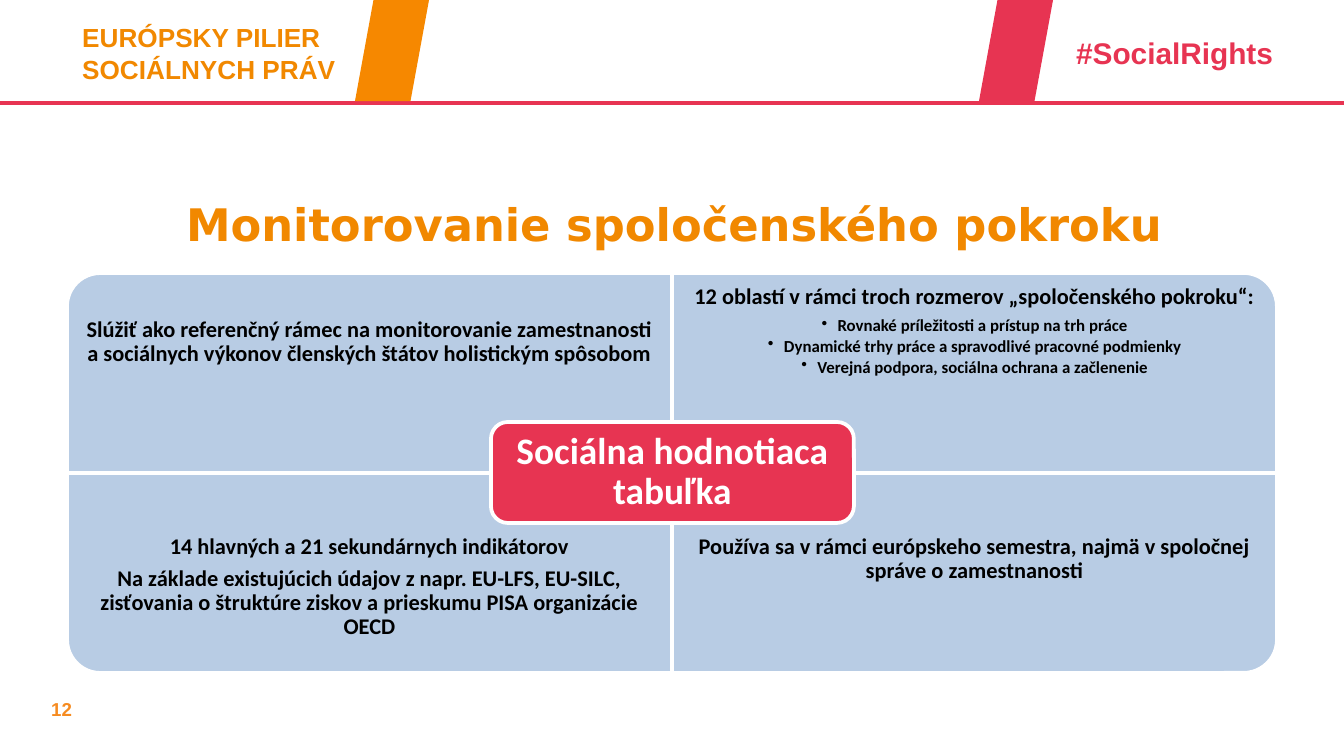
from dataclasses import dataclass

from lxml import etree
from pptx import Presentation
from pptx import util as u
from pptx.dml.color import RGBColor
from pptx.enum import shapes, text
from pptx.oxml.ns import qn


@dataclass(frozen=True)
class Theme:
    gold: str = "F18800"
    band: str = "F68800"
    page: str = "F68B20"
    red: str = "E73452"
    blue: str = "B8CCE4"
    white: str = "FFFFFF"
    black: str = "000000"
    head: str = "Arial"
    body: str = "Calibri"
    show: str = "DejaVu Sans"
    tiny: int = 9
    small: int = 10
    main: int = 12
    mark: int = 14
    tag: int = 16
    hub: int = 20
    title: int = 24


T = Theme()
SIZE = (1344, 756)
TITLE = "Monitorovanie spoločenského pokroku"
HUB = "Sociálna hodnotiaca tabuľka"
LABELS = [
    ("12", (38, 691, 293, 36), T.small, T.page),
    ("EURÓPSKY PILIER\nSOCIÁLNYCH PRÁV", (69, 15, 341, 77), T.mark, T.gold),
    ("#SocialRights", (1063, 28, 254, 50), T.tag, T.red),
]
BANDS = [(355, T.band), (979, T.red)]
PANELS = [
    (0, 0, 270, 33, [
        ("Slúžiť ako referenčný rámec na monitorovanie zamestnanosti "
         "a sociálnych výkonov členských štátov holistickým spôsobom", 0)]),
    (1, 0, 0, 0, [
        ("12 oblastí v rámci troch rozmerov „spoločenského pokroku“:", 0),
        ("Rovnaké príležitosti a prístup na trh práce", 1),
        ("Dynamické trhy práce a spravodlivé pracovné podmienky", 1),
        ("Verejná podpora, sociálna ochrana a začlenenie", 1)]),
    (0, 1, 180, 50, [
        ("14 hlavných a 21 sekundárnych indikátorov", 0),
        ("Na základe existujúcich údajov z napr. EU-LFS, EU-SILC, zisťovania "
         "o štruktúre ziskov a prieskumu PISA organizácie OECD", 0)]),
    (1, 1, 90, 50, [
        ("Používa sa v rámci európskeho semestra, najmä v spoločnej "
         "správe o zamestnanosti", 0)]),
]
LEFT, TOP, WIDE, HIGH = 67, 273, 605, 200
TEXT_H = 150
HANG = 16


def px(n):
    return u.Emu(round(n * 914400 / 134.4))


def rgb(hue):
    return RGBColor.from_string(hue)


def style(para, face, size, hue):
    font = para.font
    font.name, font.size, font.bold = face, u.Pt(size), True
    font.color.rgb = rgb(hue)


def shape(kind, box, fill, edge=None, turn=0):
    item = slide.shapes.add_shape(kind, *map(px, box))
    item.shadow.inherit = False
    item.fill.solid()
    item.fill.fore_color.rgb = rgb(fill)
    if edge:
        item.line.color.rgb = rgb(edge)
        item.line.width = u.Pt(2)
    else:
        item.line.fill.background()
    item.rotation = turn
    return item


def inset(frame, gap):
    frame.word_wrap = True
    frame.margin_left = frame.margin_right = px(gap)
    frame.margin_top = frame.margin_bottom = px(gap)


def bullet(para):
    props = para._p.get_or_add_pPr()
    props.set("marL", str(px(HANG)))
    props.set("indent", str(-px(HANG)))
    etree.SubElement(props, qn("a:buChar")).set("char", "•")


def fill_in(frame, rows):
    for i, (words, level) in enumerate(rows):
        para = frame.add_paragraph() if i else frame.paragraphs[0]
        para.text = words
        size = T.tiny if level else T.main
        para.alignment = text.PP_ALIGN.CENTER
        para.line_spacing = 0.9
        para.space_after = u.Pt(size * (0.15 if level else 0.35))
        if level:
            para.level = level
            bullet(para)
        style(para, T.body, size, T.black)


deck = Presentation()
deck.slide_width, deck.slide_height = map(px, SIZE)
slide = deck.slides.add_slide(deck.slide_layouts[5])

for words, box, size, hue in LABELS:
    frame = slide.shapes.add_textbox(*map(px, box)).text_frame
    frame.word_wrap = True
    frame.text = words
    for para in frame.paragraphs:
        style(para, T.head, size, hue)

rule = slide.shapes.add_connector(
    shapes.MSO_CONNECTOR.STRAIGHT, 0, px(103), px(SIZE[0]), px(103))
rule.line.color.rgb = rgb(T.red)
rule.line.width = u.Pt(2.25)
etree.SubElement(rule._element.spPr, qn("a:effectLst"))

for x, hue in BANDS:
    shape(shapes.MSO_SHAPE.PARALLELOGRAM, (x, 0, 74, 101), hue)

title = slide.shapes.title
title.left, title.top, title.width, title.height = map(px, (69, 172, 1210, 104))
title.text_frame.text = TITLE
title.text_frame.vertical_anchor = text.MSO_ANCHOR.MIDDLE
para = title.text_frame.paragraphs[0]
para.alignment = text.PP_ALIGN.CENTER
style(para, T.show, T.title, T.gold)

for col, row, turn, drop, rows in PANELS:
    x, y = LEFT + col * WIDE, TOP + row * HIGH
    w, h = (HIGH, WIDE) if turn % 180 else (WIDE, HIGH)
    box = (x + (WIDE - w) / 2, y + (HIGH - h) / 2, w, h)
    shape(shapes.MSO_SHAPE.ROUND_1_RECTANGLE, box, T.blue, T.white, turn)
    note = slide.shapes.add_textbox(
        *map(px, (x, y + drop, WIDE, min(TEXT_H, HIGH - drop))))
    inset(note.text_frame, 12)
    fill_in(note.text_frame, rows)

hub = shape(shapes.MSO_SHAPE.ROUNDED_RECTANGLE, (491, 422, 363, 101), T.red, T.white)
frame = hub.text_frame
inset(frame, 12)
frame.vertical_anchor = text.MSO_ANCHOR.MIDDLE
frame.text = HUB
para = frame.paragraphs[0]
para.alignment = text.PP_ALIGN.CENTER
para.line_spacing = 0.9
style(para, T.body, T.hub, T.white)

deck.save("out.pptx")
